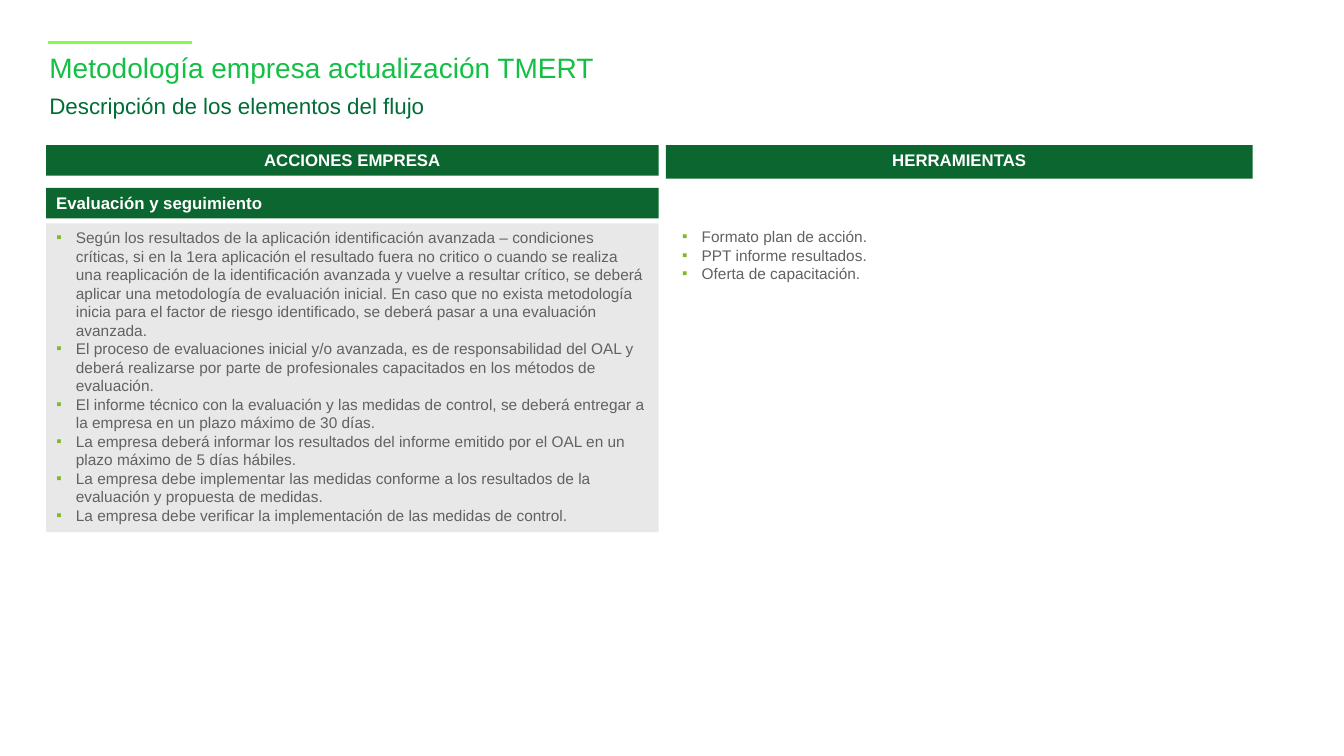
from lxml import etree
from pptx import Presentation
from pptx.dml.color import RGBColor
from pptx.enum.shapes import MSO_CONNECTOR, MSO_SHAPE
from pptx.enum.text import MSO_ANCHOR, MSO_AUTO_SIZE, PP_ALIGN
from pptx.oxml.ns import qn
from pptx.util import Pt

LEFT, CENTER = PP_ALIGN.LEFT, PP_ALIGN.CENTER
TOP, FIXED = MSO_ANCHOR.TOP, MSO_AUTO_SIZE.NONE
RECT, STRAIGHT = MSO_SHAPE.RECTANGLE, MSO_CONNECTOR.STRAIGHT
FONT = "Arial"
COLORS = {
    "title": "13C045", "sub": "006D36", "rule": "7EFF45", "bar": "0C662F",
    "panel": "E8E8E8", "white": "FFFFFF", "text": "616161", "bullet": "83B727",
}
ACTIONS = [
    "Según los resultados de la aplicación identificación avanzada – condiciones críticas, si en la 1era aplicación el resultado fuera no critico o cuando se realiza una reaplicación de la identificación avanzada y vuelve a resultar crítico, se deberá aplicar una metodología de evaluación inicial. En caso que no exista metodología inicia para el factor de riesgo identificado, se deberá pasar a una evaluación avanzada.",
    "El proceso de evaluaciones inicial y/o avanzada, es de responsabilidad del OAL y deberá realizarse por parte de profesionales capacitados en los métodos de evaluación.",
    "El informe técnico con la evaluación y las medidas de control, se deberá entregar a la empresa en un plazo máximo de 30 días.",
    "La empresa deberá informar los resultados del informe emitido por el OAL en un plazo máximo de 5 días hábiles.",
    "La empresa debe implementar las medidas conforme a los resultados de la evaluación y propuesta de medidas.",
    "La empresa debe verificar la implementación de las medidas de control.",
]
TOOLS = ["Formato plan de acción.", "PPT informe resultados.", "Oferta de capacitación."]


def color(name):
    return RGBColor.from_string(COLORS[name])


def place(shape, box):
    shape.left, shape.top, shape.width, shape.height = map(Pt, box)


def paint(shape, name):
    shape.fill.solid()
    shape.fill.fore_color.rgb = color(name)
    shape.line.fill.background()


def dot(para):
    props = para._p.get_or_add_pPr()
    props.set("marL", str(Pt(14)))
    props.set("indent", str(Pt(-14)))
    tint = etree.SubElement(props, qn("a:buClr"))
    etree.SubElement(tint, qn("a:srgbClr"), val=COLORS["bullet"])
    etree.SubElement(props, qn("a:buFont"), typeface=FONT)
    etree.SubElement(props, qn("a:buChar"), char="▪")


def write(shape, lines, size, ink, bold=False, align=LEFT, pad=(7.2, 3.6),
          lead=1.0, dots=False):
    frame = shape.text_frame
    frame.word_wrap = True
    frame.auto_size = FIXED
    frame.vertical_anchor = TOP
    frame.margin_left = frame.margin_right = Pt(pad[0])
    frame.margin_top = frame.margin_bottom = Pt(pad[1])
    for i, line in enumerate(lines):
        para = frame.add_paragraph() if i else frame.paragraphs[0]
        if dots:
            dot(para)
        para.alignment = align
        para.line_spacing = lead
        para.space_before = para.space_after = Pt(0)
        run = para.add_run()
        run.text = line
        run.font.name = FONT
        run.font.size = Pt(size)
        run.font.bold = bold
        run.font.color.rgb = color(ink)


def head(slide, box):
    x, y, w, h = box
    rule = slide.shapes.add_connector(STRAIGHT, Pt(x - 0.7), Pt(y), Pt(x + 101.5), Pt(y))
    rule.line.color.rgb = color("rule")
    rule.line.width = Pt(1.75)
    etree.SubElement(rule._element.spPr, qn("a:effectLst"))
    title = slide.shapes.title
    place(title, (x, y + 8.6, w, 27))
    write(title, ["Metodología empresa actualización TMERT"], 20, "title",
          pad=(0, 0), lead=0.9)
    sub = slide.shapes.add_textbox(Pt(x), Pt(y + h - 28), Pt(w), Pt(28))
    write(sub, ["Descripción de los elementos del flujo"], 16, "sub",
          pad=(0, 0), lead=0.9)


def bar(shape, box, label, align):
    place(shape, box)
    paint(shape, "bar")
    write(shape, [label], 12, "white", True, align)


def panel(shape, box, lines, fill):
    place(shape, box)
    paint(shape, fill)
    write(shape, lines, 11, "text", dots=True)


def actions(slide, box):
    x, y, w, h = box
    spots = slide.placeholders
    bar(spots[1], (x, y, w, 21.8), "ACCIONES EMPRESA", CENTER)
    stage = slide.shapes.add_shape(RECT, 0, 0, 0, 0)
    stage.shadow.inherit = False
    bar(stage, (x, y + 30.6, w, 21.8), "Evaluación y seguimiento", LEFT)
    panel(spots[2], (x, y + 56, w, h - 56), ACTIONS, "panel")


def tools(slide, box):
    x, y, w, h = box
    spots = slide.placeholders
    bar(spots[3], (x, y, w, 24), "HERRAMIENTAS", CENTER)
    panel(spots[4], (x + 4.3, y + 55.2, w, h - 55.2), TOOLS, "white")


def main():
    deck = Presentation()
    deck.slide_width, deck.slide_height = Pt(960), Pt(540)
    slide = deck.slides.add_slide(deck.slide_layouts[4])
    head(slide, (35.3, 30.3, 657, 66))
    actions(slide, (33, 103.6, 437.4, 276.6))
    tools(slide, (475.7, 103.6, 419, 116))
    deck.save("out.pptx")


if __name__ == "__main__":
    main()
